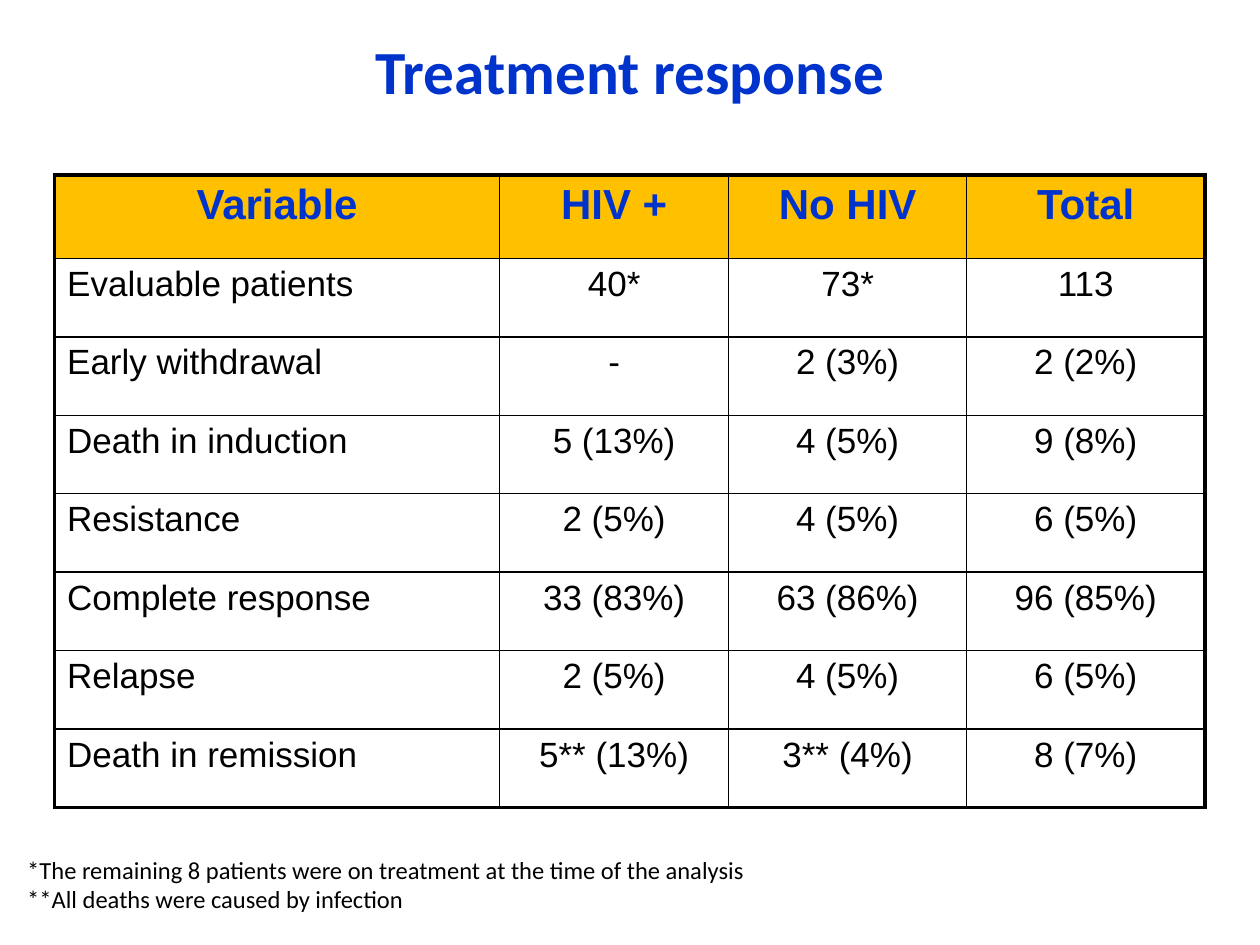
import pptx
import pptx.util
import pptx.dml.color
import pptx.enum.text
import pptx.oxml

Cm = pptx.util.Cm
Pt = pptx.util.Pt
Align = pptx.enum.text.PP_ALIGN
Anchor = pptx.enum.text.MSO_ANCHOR

COLORS = {"title": "0033CC", "head": "FFC000", "ink": "000000"}
ROWS = [
    ("Variable", "HIV +", "No HIV", "Total"),
    ("Evaluable patients", "40*", "73*", "113"),
    ("Early withdrawal", "-", "2 (3%)", "2 (2%)"),
    ("Death in induction", "5 (13%)", "4 (5%)", "9 (8%)"),
    ("Resistance", "2 (5%)", "4 (5%)", "6 (5%)"),
    ("Complete response", "33 (83%)", "63 (86%)", "96 (85%)"),
    ("Relapse", "2 (5%)", "4 (5%)", "6 (5%)"),
    ("Death in remission", "5** (13%)", "3** (4%)", "8 (7%)"),
]
NOTES = [
    "*The remaining 8 patients were on treatment at the time of the analysis",
    "**All deaths were caused by infection",
]


def color(name):
    return pptx.dml.color.RGBColor.from_string(COLORS[name])


def style(frame, face, size, ink, bold=False, align=Align.LEFT):
    for para in frame.paragraphs:
        para.alignment = align
        for run in para.runs:
            run.font.name = face
            run.font.size = Pt(size)
            run.font.bold = bold
            run.font.color.rgb = color(ink)


def border(cell, side, width):
    xml = (
        '<a:ln%s xmlns:a="http://schemas.openxmlformats.org/drawingml/2006/main" '
        'w="%d"><a:solidFill><a:srgbClr val="%s"/></a:solidFill></a:ln%s>'
    ) % (side, Pt(width), COLORS["ink"], side)
    cell._tc.get_or_add_tcPr().append(pptx.oxml.parse_xml(xml))


def add_title(slide, left, top, width, height):
    title = slide.shapes.title
    title.left, title.top = Cm(left), Cm(top)
    title.width, title.height = Cm(width), Cm(height)
    frame = title.text_frame
    frame.text = "Treatment response"
    frame.vertical_anchor = Anchor.MIDDLE
    style(frame, "Calibri", 35, "title", True, Align.CENTER)


def add_grid(slide, left, top, width, height):
    rows, cols = len(ROWS), len(ROWS[0])
    table = slide.shapes.add_table(
        rows, cols, Cm(left), Cm(top), Cm(width), Cm(height)
    ).table
    for col, share in zip(table.columns, (0.387, 0.199, 0.207, 0.207)):
        col.width = Cm(width * share)
    head = 1.68
    for i, row in enumerate(table.rows):
        row.height = Cm((height - head) / (rows - 1) if i else head)
    for i, words in enumerate(ROWS):
        for j, word in enumerate(words):
            cell = table.cell(i, j)
            cell.text_frame.text = word
            edges = {"L": j == 0, "R": j == cols - 1, "T": i == 0, "B": i == rows - 1}
            for side, outer in edges.items():
                border(cell, side, 2.25 if outer else 1)
            if i == 0:
                cell.fill.solid()
                cell.fill.fore_color.rgb = color("head")
                style(cell.text_frame, "Arial", 24, "title", True, Align.CENTER)
            else:
                cell.fill.background()
                align = Align.CENTER if j else Align.LEFT
                style(cell.text_frame, "Arial", 20, "ink", align=align)


def add_notes(slide, left, top, width, height):
    box = slide.shapes.add_textbox(Cm(left), Cm(top), Cm(width), Cm(height))
    frame = box.text_frame
    frame.word_wrap = True
    frame.vertical_anchor = Anchor.MIDDLE
    frame.text = "\n".join(NOTES)
    style(frame, "Calibri", 14, "ink")


def main():
    deck = pptx.Presentation()
    deck.slide_width, deck.slide_height = Cm(25.4), Cm(19.05)
    slide = deck.slides.add_slide(deck.slide_layouts[5])
    add_title(slide, 1.27, 0.71, 22.86, 1.4)
    add_grid(slide, 1.1, 3.53, 23.19, 12.75)
    add_notes(slide, 0.3, 17.32, 24, 1)
    deck.save("out.pptx")


if __name__ == "__main__":
    main()
